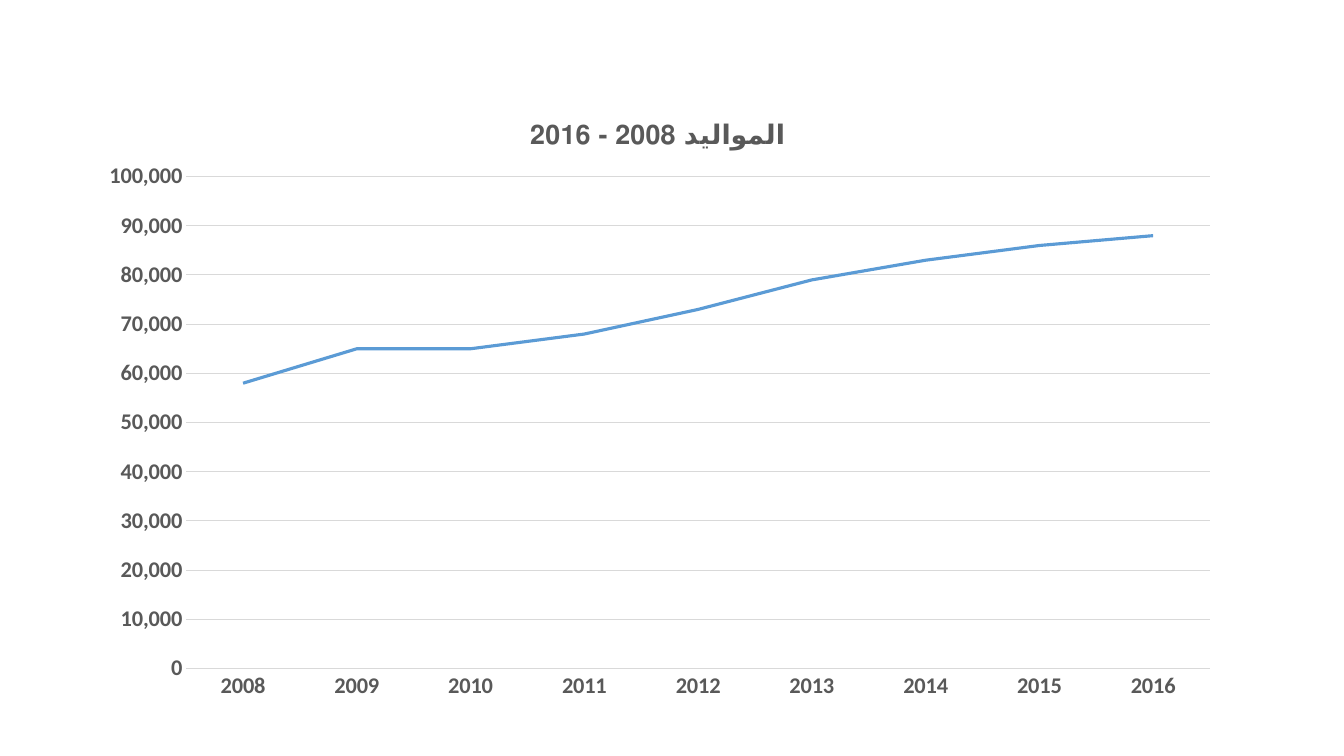
from dataclasses import dataclass

from lxml import etree
from pptx import Presentation
from pptx.chart.data import CategoryChartData
from pptx.dml.color import RGBColor
from pptx.enum.chart import XL_CHART_TYPE, XL_TICK_MARK
from pptx.oxml.ns import qn
from pptx.util import Inches, Pt

LINE_CHART = XL_CHART_TYPE.LINE
NO_TICK = XL_TICK_MARK.NONE
BLANK_LAYOUT = 6

TITLE = "المواليد 2008 - 2016"
BIRTHS = [58000, 65000, 65000, 68000, 73000, 79000, 83000, 86000, 88000]
YEARS = [str(2008 + index) for index in range(len(BIRTHS))]


@dataclass(frozen=True)
class Theme:
    font: str = "Calibri"
    text: str = "595959"
    grid: str = "D9D9D9"
    series: str = "5B9BD5"
    label_size: float = 16
    title_size: float = 19.2
    grid_width: float = 0.75
    series_width: float = 2.25


def format_font(font, *, name, size, color, bold=True):
    font.name = name
    font.size = Pt(size)
    font.bold = bold
    font.color.rgb = RGBColor.from_string(color)


def write_text(text_frame, text, *, right_to_left=False, **font_format):
    paragraph = text_frame.paragraphs[0]
    run = paragraph.add_run()
    run.text = text
    format_font(run.font, **font_format)
    if right_to_left:
        paragraph._p.get_or_add_pPr().set("rtl", "1")


def format_line(line, color, width):
    line.color.rgb = RGBColor.from_string(color)
    line.width = Pt(width)


class SlideBuilder:
    def __init__(self, slide, theme):
        self.slide = slide
        self.theme = theme

    def add_line_chart(self, title, categories, values, box, plot_area):
        theme = self.theme
        data = CategoryChartData(number_format="#,##0")
        data.categories = categories
        data.add_series("Series 1", values)
        lengths = [Inches(length) for length in box]
        chart = self.slide.shapes.add_chart(LINE_CHART, *lengths, data).chart
        chart.has_legend = False
        format_font(chart.font, name=theme.font, size=theme.label_size, color=theme.text)
        chart.has_title = True
        chart.chart_title.include_in_layout = False
        write_text(chart.chart_title.text_frame, title, right_to_left=True,
                   name=theme.font, size=theme.title_size, color=theme.text)

        series = chart.plots[0].series[0]
        series.smooth = False
        format_line(series.format.line, theme.series, theme.series_width)
        chart.plots[0].vary_by_categories = False
        self.format_axes(chart)
        self.place_plot(chart, plot_area)

    def format_axes(self, chart):
        theme = self.theme
        for axis in (chart.category_axis, chart.value_axis):
            axis.major_tick_mark = axis.minor_tick_mark = NO_TICK
            format_font(axis.tick_labels.font, name=theme.font,
                        size=theme.label_size, color=theme.text)
        format_line(chart.category_axis.format.line, theme.grid, theme.grid_width)
        value_axis = chart.value_axis
        value_axis.minimum_scale = 0
        value_axis.maximum_scale = 100000
        value_axis.major_unit = 10000
        value_axis.tick_labels.number_format = "#,##0"
        value_axis.tick_labels.number_format_is_linked = False
        value_axis.format.line.fill.background()
        format_line(value_axis.major_gridlines.format.line, theme.grid, theme.grid_width)

    def place_plot(self, chart, plot_area):
        plot = chart._chartSpace.chart.plotArea
        for old_layout in plot.findall(qn("c:layout")):
            plot.remove(old_layout)
        layout = etree.Element(qn("c:layout"))
        plot.insert(0, layout)
        manual = etree.SubElement(layout, qn("c:manualLayout"))
        settings = {"layoutTarget": "inner", "xMode": "edge", "yMode": "edge"}
        settings.update(zip("xywh", map(str, plot_area)))
        for name, value in settings.items():
            etree.SubElement(manual, qn(f"c:{name}")).set("val", value)


def main():
    presentation = Presentation()
    presentation.slide_width = Inches(13.33)
    presentation.slide_height = Inches(7.5)
    slide = presentation.slides.add_slide(presentation.slide_layouts[BLANK_LAYOUT])
    builder = SlideBuilder(slide, Theme())
    builder.add_line_chart(TITLE, YEARS, BIRTHS,
                           box=(0.82, 0.96, 11.41, 6.1),
                           plot_area=(0.09, 0.13, 0.89, 0.8))
    presentation.save("out.pptx")


if __name__ == "__main__":
    main()
